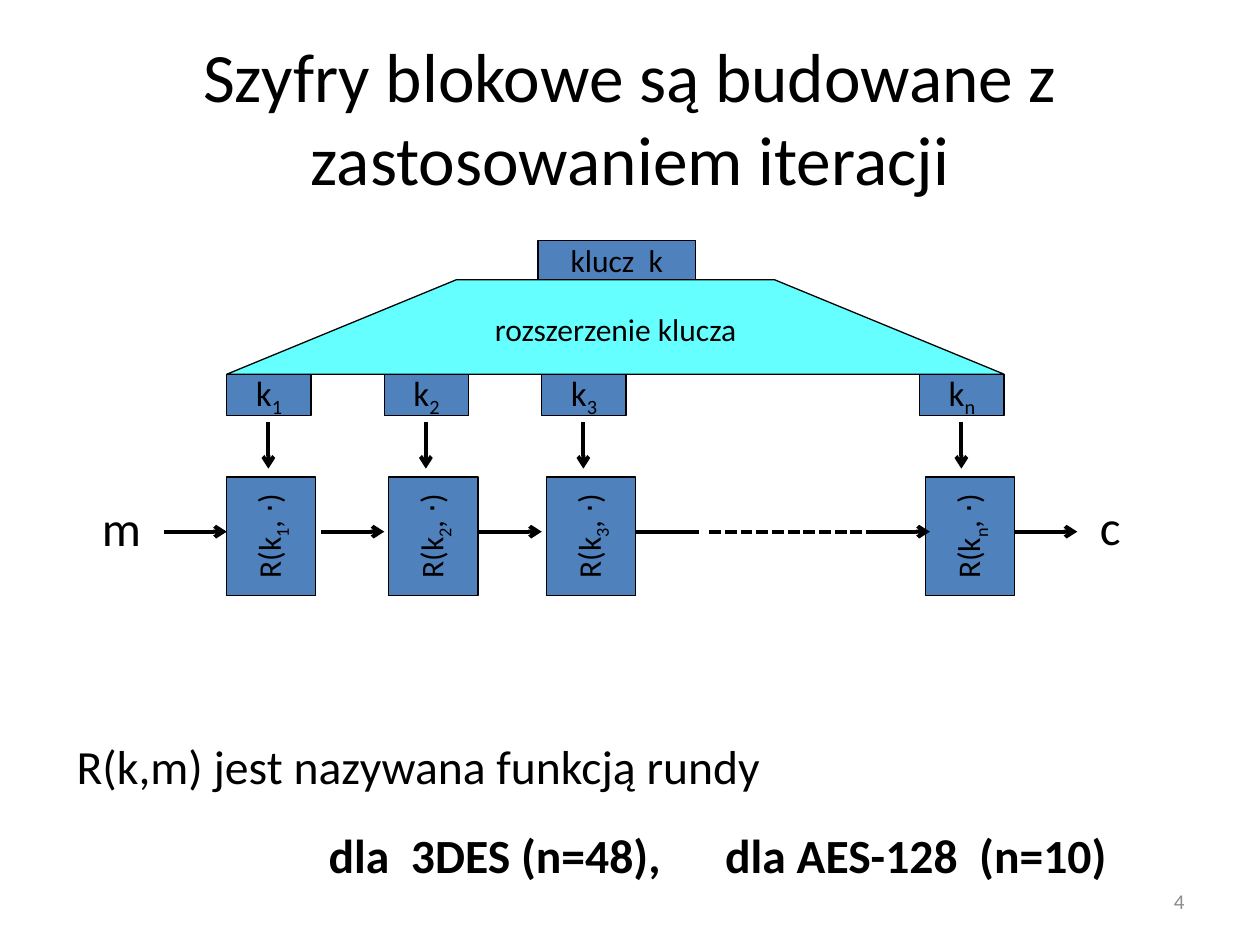
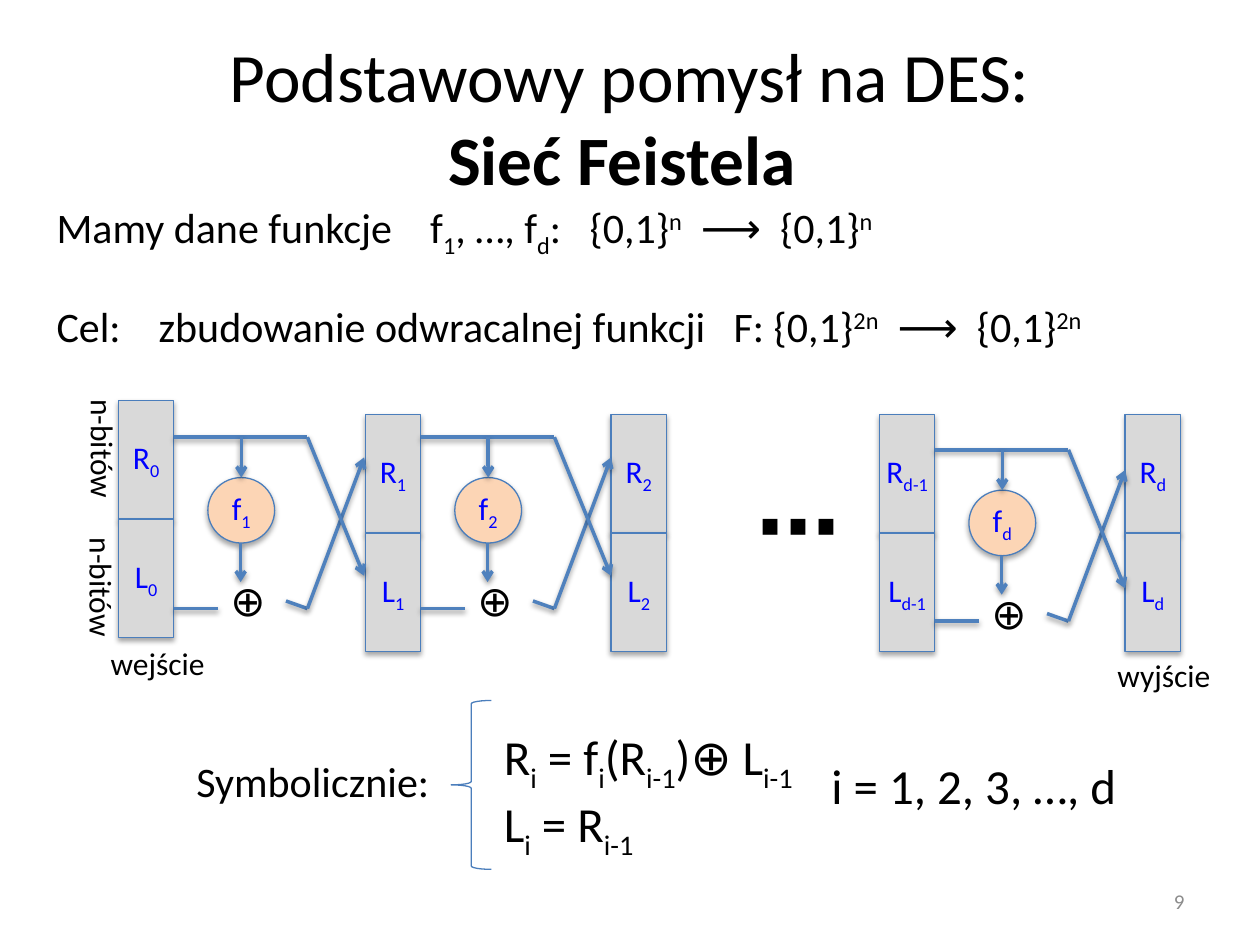
from dataclasses import dataclass
from typing import NamedTuple

from lxml import etree
from pptx import Presentation
from pptx import util as u
from pptx.dml.color import RGBColor
from pptx.enum import dml, shapes, text
from pptx.oxml.ns import qn

PX = 9144  # EMU per px, 100 px to the inch
FONT = "Calibri"
COLORS = {
    "ink": "000000", "number": "8C8C8C", "blue": "4F81BD", "edge": "4B7EBC",
    "cyan": "66FFFF", "gray": "D9D9D9", "peach": "FCD5B5", "label": "0000FF",
}
SHAPE = shapes.MSO_SHAPE
ALIGN = text.PP_ALIGN


class Box(NamedTuple):
    left: int
    top: int
    width: int
    height: int

    def emu(self) -> list[int]:
        return [side * PX for side in self]


@dataclass(frozen=True)
class BlockStyle:
    fill: str | None
    edge: str
    label: str = "ink"
    size: float = 18
    shadow: bool = False
    side_inset: int = 10


@dataclass(frozen=True)
class LineStyle:
    color: str
    width: float
    shadow: bool = False


KEY = BlockStyle("blue", "ink", size=20)
ROUND = BlockStyle("blue", "ink")
EXPANSION = BlockStyle("cyan", "ink")
HALF = BlockStyle("gray", "edge", "label", shadow=True, side_inset=0)
FUNCTION = BlockStyle("peach", "edge", "label", shadow=True, side_inset=0)
BRACE = BlockStyle(None, "edge")
FLOW = LineStyle("ink", 2.25)
WIRE = LineStyle("blue", 2, shadow=True)


# Shared helpers
def rgb(name: str) -> RGBColor:
    return RGBColor.from_string(COLORS[name])


def style_span(span, size: float, color: str) -> None:
    span.font.name = FONT
    span.font.size = u.Pt(size)
    span.font.color.rgb = rgb(color)


def write(para, marked: str, size: float, color: str = "ink") -> None:
    """Parts are split by |; a leading _ lowers a part and ^ raises it."""
    for part in marked.split("|"):
        span = para.add_run()
        span.text = part.lstrip("_^")
        style_span(span, size, color)
        baseline = {"_": "-25000", "^": "30000"}.get(part[0])
        if baseline:
            span.font._element.set("baseline", baseline)


def add_text(page, box: Box, lines: list[str], size: float, color: str = "ink",
             wrap: bool = True, gap: float = 0, rotation: int = 0, align=ALIGN.LEFT):
    label = page.shapes.add_textbox(*box.emu())
    label.rotation = rotation
    frame = label.text_frame
    frame.word_wrap = wrap
    for index, line in enumerate(lines):
        para = frame.add_paragraph() if index else frame.paragraphs[0]
        para.alignment = align
        if index:
            para.space_before = u.Pt(gap)
        write(para, line, size, color)
    return label


def add_shadow(effects, alpha: int, dist: float) -> None:
    shadow = etree.SubElement(effects, qn("a:outerShdw"), blurRad=str(u.Pt(3.1)),
                              dist=str(u.Pt(dist)), dir="5400000", rotWithShape="0")
    color = etree.SubElement(shadow, qn("a:srgbClr"), val=COLORS["ink"])
    etree.SubElement(color, qn("a:alpha"), val=str(alpha * 1000))


def add_block(page, kind, box: Box, style: BlockStyle, marked: str = "", rotation: int = 0):
    block = page.shapes.add_shape(kind, *box.emu())
    block.rotation = rotation
    if style.fill:
        block.fill.solid()
        block.fill.fore_color.rgb = rgb(style.fill)
    else:
        block.fill.background()
    block.line.color.rgb = rgb(style.edge)
    block.line.width = u.Pt(0.75)
    block.shadow.inherit = False
    if style.shadow:
        add_shadow(block.element.spPr.find(qn("a:effectLst")), 35, 1.8)
    if marked:
        frame = block.text_frame
        frame.margin_left = frame.margin_right = style.side_inset * PX
        frame.vertical_anchor = text.MSO_ANCHOR.MIDDLE
        frame.paragraphs[0].alignment = ALIGN.CENTER
        write(frame.paragraphs[0], marked, style.size, style.label)
    return block


def add_line(page, x1: int, y1: int, x2: int, y2: int, style: LineStyle,
             arrow: bool = False, dashed: bool = False):
    line = page.shapes.add_connector(shapes.MSO_CONNECTOR.STRAIGHT,
                                     *(value * PX for value in (x1, y1, x2, y2)))
    line.line.color.rgb = rgb(style.color)
    line.line.width = u.Pt(style.width)
    if dashed:
        line.line.dash_style = dml.MSO_LINE.SQUARE_DOT
    properties = line.element.spPr
    if arrow:
        etree.SubElement(properties.find(qn("a:ln")), qn("a:tailEnd"), type="arrow")
    effects = etree.SubElement(properties, qn("a:effectLst"))
    if style.shadow:
        add_shadow(effects, 38, 1.6)
    return line


def add_page(deck, title: str, number: str):
    page = deck.slides.add_slide(deck.slide_layouts[5])
    heading = page.shapes.title
    heading.left, heading.top, heading.width, heading.height = Box(50, 30, 900, 125).emu()
    frame = heading.text_frame
    frame.text = title
    frame.auto_size = text.MSO_AUTO_SIZE.NONE
    frame.vertical_anchor = text.MSO_ANCHOR.MIDDLE
    frame.paragraphs[0].alignment = ALIGN.CENTER
    for span in frame.paragraphs[0].runs:
        style_span(span, 39.6, "ink")
    footer = add_text(page, Box(717, 695, 233, 40), [number], 12, "number", align=ALIGN.RIGHT)
    footer.text_frame.vertical_anchor = text.MSO_ANCHOR.MIDDLE
    return page


# Slide 1: iterated block cipher
class Round(NamedTuple):
    index: str
    key_left: int
    function_left: int


ROUNDS = [Round("1", 180, 168), Round("2", 305, 297), Round("3", 430, 422), Round("n", 730, 723)]


def build_iteration(deck) -> None:
    page = add_page(deck, "Szyfry blokowe są budowane z zastosowaniem iteracji", "4")

    # Key and its expansion
    add_block(page, SHAPE.RECTANGLE, Box(427, 191, 125, 31), ROUND, "klucz  k")
    expansion = add_block(page, SHAPE.TRAPEZOID, Box(180, 222, 617, 75), EXPANSION)
    expansion.adjustments[0] = 2.43
    add_text(page, Box(383, 241, 220, 40), ["rozszerzenie klucza"], 18, wrap=False)

    # Round keys and round functions
    for step in ROUNDS:
        add_block(page, SHAPE.RECTANGLE, Box(step.key_left, 297, 67, 33), KEY, f"k|_{step.index}")
        add_block(page, SHAPE.RECTANGLE, Box(step.function_left, 390, 94, 71), ROUND,
                  f"R(k|_{step.index}|, ⋅)", rotation=270)
        middle = step.key_left + 33
        add_line(page, middle, 335, middle, 372, FLOW, arrow=True)

    # Message flow
    for start in (130, 255, 380, 505, 688, 805):
        add_line(page, start, 422, start + 50, 422, FLOW, arrow=start != 505)
    add_line(page, 563, 422, 688, 422, FLOW, dashed=True)
    add_text(page, Box(71, 390, 52, 57), ["m"], 28, wrap=False)
    add_text(page, Box(863, 389, 42, 57), ["c"], 28)

    # Explanation
    note = add_text(page, Box(51, 580, 892, 112),
                    ["R(k,m) jest nazywana funkcją rundy",
                     "dla  3DES (n=48),      dla AES-128  (n=10)"], 27.2, gap=18.2)
    examples = note.text_frame.paragraphs[1]
    examples.runs[0].font.bold = True
    examples._p.get_or_add_pPr().set("marL", str(200 * PX))


# Slide 2: Feistel network
class Column(NamedTuple):
    index: str
    left: int
    top: int


class Stage(NamedTuple):
    index: str
    left: int
    drop: int


COLUMNS = [Column("0", 94, 318), Column("1", 290, 329), Column("2", 485, 329),
           Column("d-1", 698, 329), Column("d", 893, 329)]
STAGES = [Stage("1", 94, 0), Stage("2", 290, 0), Stage("d", 698, 10)]


def add_column(page, column: Column) -> None:
    for row, half in enumerate("RL"):
        add_block(page, SHAPE.RECTANGLE, Box(column.left, column.top + 94 * row, 44, 94),
                  HALF, f"{half}|_{column.index}")


def add_stage(page, stage: Stage) -> None:
    start, turn, end = (stage.left + offset for offset in (44, 150, 195))
    middle = stage.left + 97
    high, low = 347 + stage.drop, 483 + stage.drop
    add_text(page, Box(stage.left + 79, high + 104, 54, 50), ["⊕"], 24, wrap=False)
    add_line(page, start, high, turn, high, WIRE)
    add_line(page, start, low, start + 35, low, WIRE)
    add_line(page, turn - 17, low - 6, turn, low, WIRE)
    add_line(page, turn, low, end, high + 16, WIRE, arrow=True)
    add_line(page, turn, high, end, high + 110, WIRE, arrow=True)
    function = add_block(page, SHAPE.OVAL, Box(stage.left + 71, high + 32, 53, 52),
                         FUNCTION, f"f|_{stage.index}")
    entry = add_line(page, middle, high, middle, high + 32, WIRE, arrow=True)
    entry.begin_x = function.left + function.width // 2
    entry.end_connect(function, 0)
    add_line(page, middle, high + 84, middle, high + 115, WIRE, arrow=True)


def build_feistel(deck) -> None:
    page = add_page(deck, "Podstawowy pomysł na DES:\vSieć Feistela ", "9")
    page.shapes.title.text_frame.paragraphs[0].runs[1].font.bold = True

    # Goal
    add_text(page, Box(35, 155, 851, 125),
             ["Mamy dane funkcje    f|_1|, …, f|_d|:   {0,1}|^n|  ⟶  {0,1}|^n",
              "Cel:    zbudowanie odwracalnej funkcji   F: {0,1}|^2n|  ⟶  {0,1}|^2n"],
             24, gap=23.8)

    # Network
    for column in COLUMNS:
        add_column(page, column)
    for stage in STAGES:
        add_stage(page, stage)
    dots = add_text(page, Box(591, 370, 77, 91), ["⋯"], 48, wrap=False)
    dots.text_frame.paragraphs[0].runs[0].font.bold = True
    add_text(page, Box(78, 506, 96, 40), ["wejście"], 18, wrap=False)
    add_text(page, Box(877, 516, 95, 40), ["wyjście"], 18, wrap=False)
    for left, top in ((32, 337), (31, 447)):
        add_text(page, Box(left, top, 100, 40), ["n-bitów"], 18, wrap=False, rotation=90)

    # Formulas
    add_text(page, Box(146, 595, 210, 50), ["Symbolicznie:"], 24)
    add_text(page, Box(390, 572, 284, 104),
             ["R|_i| = f|_i|(R|_i-1|)⊕ L|_i-1", "L|_i| = R|_i-1"], 28)
    add_block(page, SHAPE.LEFT_BRACE, Box(358, 556, 32, 134), BRACE)
    add_text(page, Box(650, 595, 256, 57), ["i = 1, 2, 3, …, d"], 28)


def main() -> None:
    deck = Presentation()
    deck.slide_width, deck.slide_height = 1000 * PX, 750 * PX
    build_iteration(deck)
    build_feistel(deck)
    deck.save("out.pptx")


if __name__ == "__main__":
    main()
